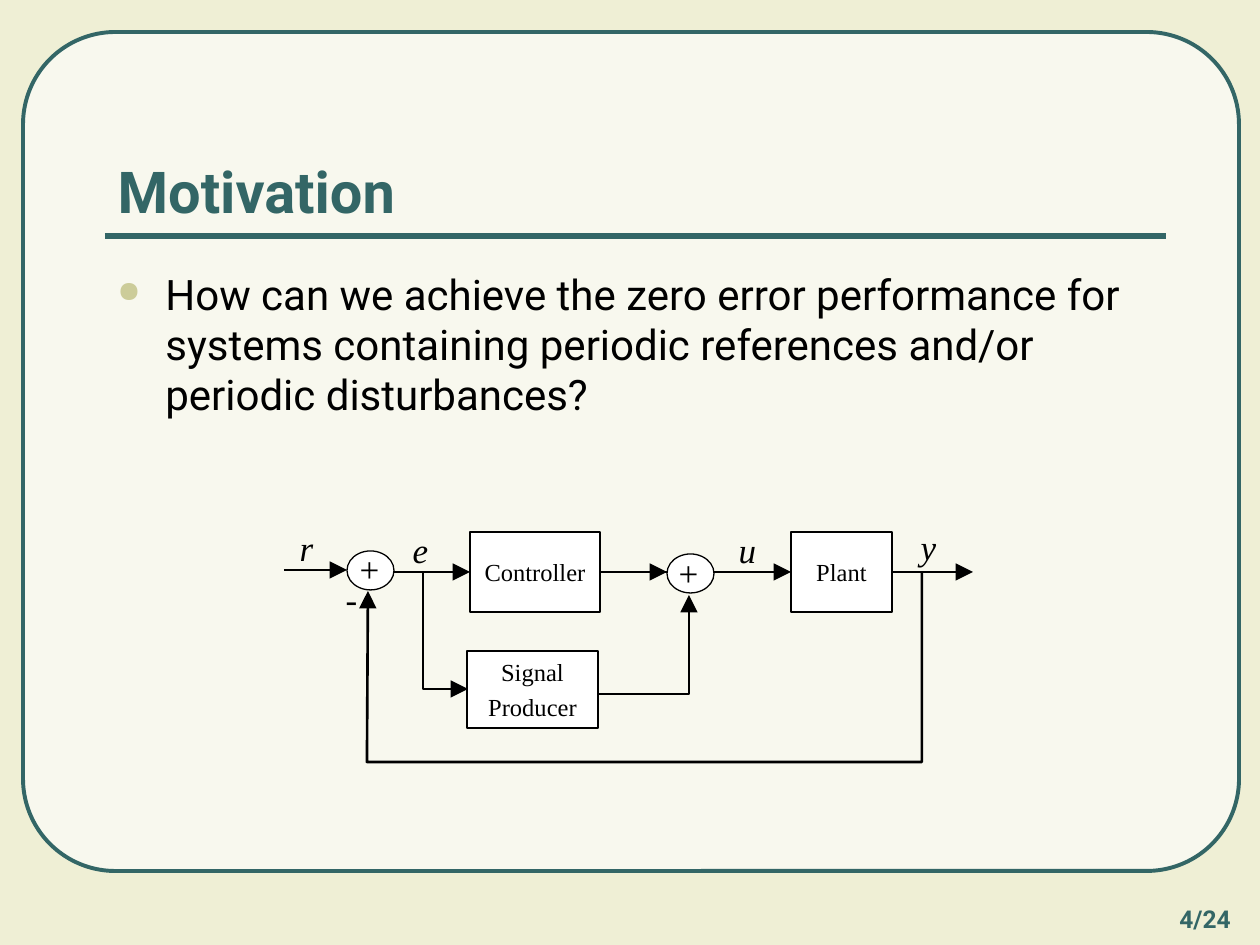
"""Build the motivation slide with its block diagram."""
from dataclasses import dataclass
from typing import Any

from lxml import etree
from pptx import Presentation
from pptx.dml.color import RGBColor
from pptx.enum.shapes import MSO_CONNECTOR, MSO_SHAPE
from pptx.enum.text import MSO_ANCHOR, PP_ALIGN
from pptx.oxml.ns import qn
from pptx.util import Emu, Pt

STRAIGHT = MSO_CONNECTOR.STRAIGHT
RECTANGLE, ELLIPSE = MSO_SHAPE.RECTANGLE, MSO_SHAPE.OVAL
ROUNDED = MSO_SHAPE.ROUNDED_RECTANGLE
LEFT, CENTER = PP_ALIGN.LEFT, PP_ALIGN.CENTER
TOP, MIDDLE, BOTTOM = MSO_ANCHOR.TOP, MSO_ANCHOR.MIDDLE, MSO_ANCHOR.BOTTOM

EMU_PER_PX = 914400 / 126
CREAM, PANEL, TEAL, KHAKI = "EFEFD5", "F8F8EE", "336666", "CCCC99"
BLACK, WHITE = "000000", "FFFFFF"
SANS, SERIF = "Roboto", "Times New Roman"
TITLE_ONLY = 5
LEFT_SIDE, RIGHT_SIDE = 1, 3


@dataclass(frozen=True)
class Box:
    left: int
    top: int
    width: int
    height: int


@dataclass(frozen=True)
class TextStyle:
    font: str
    size: int
    color: str = BLACK
    bold: bool = False
    italic: bool = False
    align: PP_ALIGN = CENTER
    anchor: MSO_ANCHOR = TOP
    space_before: float = 0


@dataclass(frozen=True)
class Block:
    text: str
    box: Box


@dataclass(frozen=True)
class Label:
    text: str
    left: int
    top: int
    italic: bool = True


@dataclass(frozen=True)
class Arrow:
    start: tuple[int, int]
    end: tuple[int, int]
    source: str = ""
    target: str = ""


TITLE_STYLE = TextStyle(SANS, 33, TEAL, bold=True, align=LEFT, anchor=BOTTOM)
BODY_STYLE = TextStyle(SANS, 24, align=LEFT, space_before=4.8)
PAGE_STYLE = TextStyle(SANS, 14, TEAL, bold=True)
BLOCK_STYLE = TextStyle(SERIF, 14, anchor=MIDDLE, space_before=3)

QUESTION = ("How can we achieve the zero error performance for systems containing "
            "periodic references and/or periodic disturbances?")
BLOCKS = (
    Block("Controller", Box(470, 532, 130, 80)),
    Block("Signal\nProducer", Box(467, 651, 131, 77)),
    Block("Plant", Box(791, 532, 101, 80)),
)
SUMS = (Box(347, 551, 47, 39), Box(667, 554, 47, 39))
LABELS = (
    Label("r", 261, 520),
    Label("e", 375, 522),
    Label("u", 702, 522),
    Label("y", 883, 519),
    Label("-", 306, 571, italic=False),
    Label("+", 324, 541, italic=False),
    Label("+", 643, 545, italic=False),
)
ARROWS = (
    Arrow((284, 570), (347, 570)),
    Arrow((394, 572), (470, 572), target="Controller"),
    Arrow((600, 572), (791, 572), "Controller", "Plant"),
    Arrow((600, 572), (667, 572), "Controller"),
    Arrow((892, 572), (973, 572), "Plant"),
)
ROUTES = (
    ((423, 573), (423, 689), (468, 689)),
    ((599, 694), (689, 694), (689, 595)),
    ((922, 572), (922, 762), (367, 762), (368, 591)),
)


def px(value: int) -> Emu:
    """Turn pixels into EMU."""
    return Emu(round(value * EMU_PER_PX))


def rgb(color: str) -> RGBColor:
    """Turn a hex string into a colour."""
    return RGBColor.from_string(color)


def apply(target: Any, values: dict[str, Any]) -> None:
    """Set every named attribute on the target."""
    for name, value in values.items():
        setattr(target, name, value)


def bounds(box: Box) -> tuple[Emu, Emu, Emu, Emu]:
    """Give the four lengths of a box in EMU."""
    return px(box.left), px(box.top), px(box.width), px(box.height)


def write(shape: Any, text: str, style: TextStyle) -> None:
    """Fill a shape with styled text, one paragraph a line."""
    frame = shape.text_frame
    frame.text = text
    apply(frame, {"word_wrap": True, "vertical_anchor": style.anchor})
    for paragraph in frame.paragraphs:
        apply(paragraph, {"alignment": style.align,
                          "space_before": Pt(style.space_before)})
        for run in paragraph.runs:
            apply(run.font, {"name": style.font, "size": Pt(style.size),
                             "bold": style.bold, "italic": style.italic})
            run.font.color.rgb = rgb(style.color)


def add_text(slide: Any, text: str, box: Box, style: TextStyle) -> Any:
    """Add a text box."""
    shape = slide.shapes.add_textbox(*bounds(box))
    write(shape, text, style)
    return shape


def set_line(shape: Any, color: str, width: float) -> None:
    """Set the colour and width of an outline."""
    shape.line.color.rgb = rgb(color)
    shape.line.width = Pt(width)


def add_figure(slide: Any, kind: MSO_SHAPE, box: Box, fill: str = WHITE,
               line: str = BLACK, width: float = 0.75) -> Any:
    """Add a filled preset shape without a shadow."""
    shape = slide.shapes.add_shape(kind, *bounds(box))
    shape.shadow.inherit = False
    shape.fill.solid()
    shape.fill.fore_color.rgb = rgb(fill)
    set_line(shape, line, width)
    return shape


def add_arrowhead(shape: Any) -> None:
    """Put a large triangle at the far end of a line."""
    line = shape.element.spPr.find(qn("a:ln"))
    etree.SubElement(line, qn("a:tailEnd"), type="triangle", w="lg", len="lg")


def add_line(slide: Any, start: tuple[int, int], end: tuple[int, int],
             color: str = BLACK, width: float = 1.5) -> Any:
    """Add a straight connector without a shadow."""
    connector = slide.shapes.add_connector(STRAIGHT, *map(px, start + end))
    set_line(connector, color, width)
    etree.SubElement(connector.element.spPr, qn("a:effectLst"))
    return connector


def add_route(slide: Any, points: tuple[tuple[int, int], ...]) -> None:
    """Add a bent signal path that ends in an arrowhead."""
    builder = slide.shapes.build_freeform(*points[0], scale=EMU_PER_PX)
    builder.add_line_segments(points[1:], close=False)
    shape = builder.convert_to_shape()
    shape.shadow.inherit = False
    shape.fill.background()
    set_line(shape, BLACK, 1.5)
    add_arrowhead(shape)


def add_bullet(shape: Any) -> None:
    """Give the first paragraph a round khaki bullet and a hanging indent."""
    properties = next(shape.element.iter(qn("a:pPr")))
    properties.set("marL", str(px(48)))
    properties.set("indent", str(px(-48)))
    color = etree.SubElement(properties, qn("a:buClr"))
    etree.SubElement(color, qn("a:srgbClr"), val=KHAKI)
    etree.SubElement(properties, qn("a:buSzPct"), val="70000")
    etree.SubElement(properties, qn("a:buChar"), char="●")


def add_diagram(slide: Any) -> None:
    """Draw the blocks, signals and labels of the diagram."""
    shapes = {}
    for block in BLOCKS:
        shape = add_figure(slide, RECTANGLE, block.box)
        apply(shape.text_frame, {"margin_top": 0, "margin_bottom": 0})
        write(shape, block.text, BLOCK_STYLE)
        shapes[block.text] = shape
    for arrow in ARROWS:
        connector = add_line(slide, arrow.start, arrow.end)
        add_arrowhead(connector)
        if arrow.source:
            connector.begin_connect(shapes[arrow.source], RIGHT_SIDE)
        if arrow.target:
            connector.end_connect(shapes[arrow.target], LEFT_SIDE)
    for box in SUMS:
        add_figure(slide, ELLIPSE, box)
    for points in ROUTES:
        add_route(slide, points)
    for label in LABELS:
        style = TextStyle(SERIF, 20, italic=label.italic)
        add_text(slide, label.text, Box(label.left, label.top, 91, 62), style)


def main() -> None:
    """Build and save the presentation."""
    presentation = Presentation()
    apply(presentation, {"slide_width": px(1260), "slide_height": px(945)})
    slide = presentation.slides.add_slide(presentation.slide_layouts[TITLE_ONLY])
    slide.background.fill.solid()
    slide.background.fill.fore_color.rgb = rgb(CREAM)

    panel = add_figure(slide, ROUNDED, Box(23, 32, 1216, 839), PANEL, TEAL, 2.25)
    panel.adjustments[0] = 0.11
    add_line(slide, (105, 236), (1166, 236), TEAL, 3)

    title = slide.shapes.title
    title.element.getparent().append(title.element)
    apply(title, dict(zip(("left", "top", "width", "height"),
                          bounds(Box(105, 73, 1061, 158)))))
    write(title, "Motivation", TITLE_STYLE)

    body = add_text(slide, QUESTION, Box(105, 262, 1061, 557), BODY_STYLE)
    add_bullet(body)
    add_text(slide, "4/24", Box(1151, 898, 108, 47), PAGE_STYLE)
    add_diagram(slide)
    presentation.save("out.pptx")


if __name__ == "__main__":
    main()
